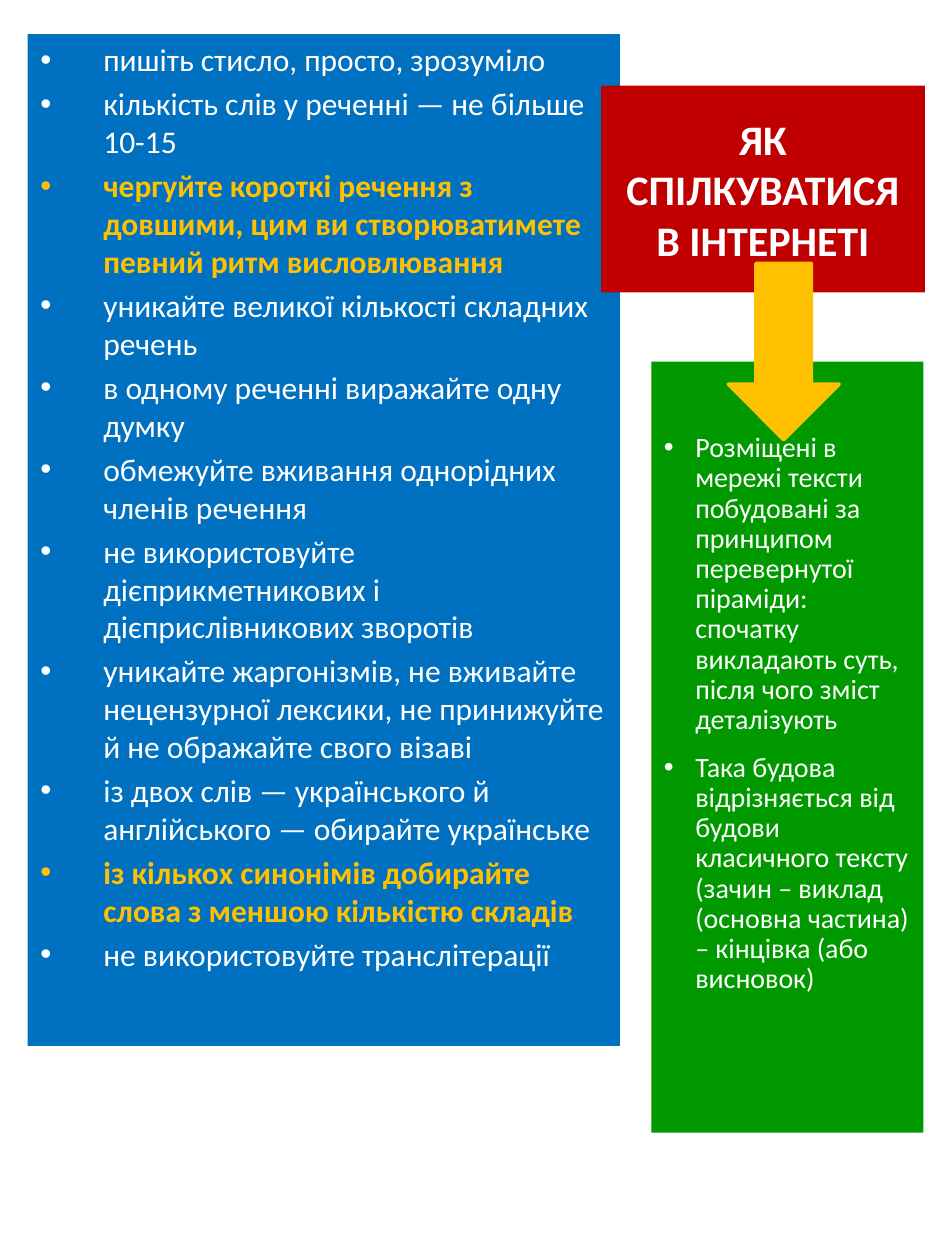
from pptx import Presentation
from pptx.dml.color import RGBColor
from pptx.enum.shapes import MSO_SHAPE as Shape
from pptx.enum.text import MSO_ANCHOR as Anchor, MSO_AUTO_SIZE as Fit, PP_ALIGN as Align
from pptx.oxml.ns import qn
from pptx.util import Inches, Pt
from lxml.etree import SubElement

FONT = "Calibri"
COLORS = {"blue": "0070C0", "red": "C00000", "green": "009900",
          "gold": "FFC000", "white": "FFFFFF"}

# Each tip: wording, whether it is stressed
TIPS = [
    ("пишіть стисло, просто, зрозуміло", False),
    ("кількість слів у реченні — не більше 10-15", False),
    ("чергуйте короткі речення з довшими, цим ви створюватимете певний "
     "ритм висловлювання", True),
    ("уникайте великої кількості складних речень", False),
    ("в одному реченні виражайте одну думку", False),
    ("обмежуйте вживання однорідних членів речення", False),
    ("не використовуйте дієприкметникових і дієприслівникових зворотів", False),
    ("уникайте жаргонізмів, не вживайте нецензурної лексики, не принижуйте "
     "й не ображайте свого візаві", False),
    ("із двох слів — українського й англійського — обирайте українське", False),
    ("із кількох синонімів добирайте слова з меншою кількістю складів", True),
    ("не використовуйте транслітерації", False),
]
NOTES = [
    ("Розміщені в мережі тексти побудовані за принципом перевернутої піраміди: "
     "спочатку викладають суть, після чого зміст деталізують", False),
    ("Така будова відрізняється від будови класичного тексту (зачин – виклад "
     "(основна частина) – кінцівка (або висновок)", False),
]


def rgb(name):
    return RGBColor.from_string(COLORS[name])


def paint(shape, color):
    shape.fill.solid()
    shape.fill.fore_color.rgb = rgb(color)


def place(shape, left, top, width, height):
    shape.left, shape.top = Inches(left), Inches(top)
    shape.width, shape.height = Inches(width), Inches(height)


def set_frame(shape, anchor):
    frame = shape.text_frame
    frame.word_wrap = True
    frame.auto_size = Fit.NONE
    frame.vertical_anchor = anchor
    return frame


def add_run(para, text, size, color="white", bold=False):
    run = para.add_run()
    run.text = text
    font = run.font
    font.name, font.size, font.bold = FONT, Pt(size), bold
    font.color.rgb = rgb(color)


def set_bullet(para, indent):
    props = para._p.get_or_add_pPr()
    props.set("marL", str(Inches(indent)))
    props.set("indent", str(-Inches(indent)))
    SubElement(props, qn("a:buFont")).set("typeface", "Arial")
    SubElement(props, qn("a:buChar")).set("char", "•")


def fill_list(frame, items, size, indent, gap, spacing=1.0):
    for i, (text, stress) in enumerate(items):
        para = frame.add_paragraph() if i else frame.paragraphs[0]
        set_bullet(para, indent)
        para.alignment = Align.LEFT
        para.line_spacing = spacing
        para.space_before = Pt(gap if i else 0)
        add_run(para, text, size, "gold" if stress else "white", stress)


def add_tips(slide):
    body = slide.placeholders[1]
    place(body, 0.22, 0.27, 4.7, 8.03)
    paint(body, "blue")
    fill_list(set_frame(body, Anchor.TOP), TIPS, 18, 0.5, 3.6)


def add_title(slide):
    title = slide.shapes.title
    place(title, 4.77, 0.68, 2.57, 1.64)
    paint(title, "red")
    para = set_frame(title, Anchor.MIDDLE).paragraphs[0]
    para.alignment = Align.CENTER
    add_run(para, "ЯК СПІЛКУВАТИСЯ В ІНТЕРНЕТІ", 24, bold=True)
    slide.shapes._spTree.append(title._element)  # above the tips


def add_notes(slide):
    box = slide.shapes.add_textbox(
        Inches(5.17), Inches(2.87), Inches(2.16), Inches(6.12))
    paint(box, "green")
    frame = set_frame(box, Anchor.TOP)
    frame.margin_top = Inches(0.57)
    fill_list(frame, NOTES, 16, 0.25, 10, 0.9)


def add_arrow(slide):
    arrow = slide.shapes.add_shape(
        Shape.DOWN_ARROW, Inches(5.78), Inches(2.09), Inches(0.88), Inches(1.4))
    arrow.shadow.inherit = False
    paint(arrow, "gold")
    arrow.line.color.rgb = rgb("gold")
    arrow.line.width = Pt(2)


def main():
    deck = Presentation()
    deck.slide_width, deck.slide_height = Inches(7.5), Inches(10)
    slide = deck.slides.add_slide(deck.slide_layouts[1])
    add_tips(slide)
    add_title(slide)
    add_notes(slide)
    add_arrow(slide)
    deck.save("out.pptx")


if __name__ == "__main__":
    main()
